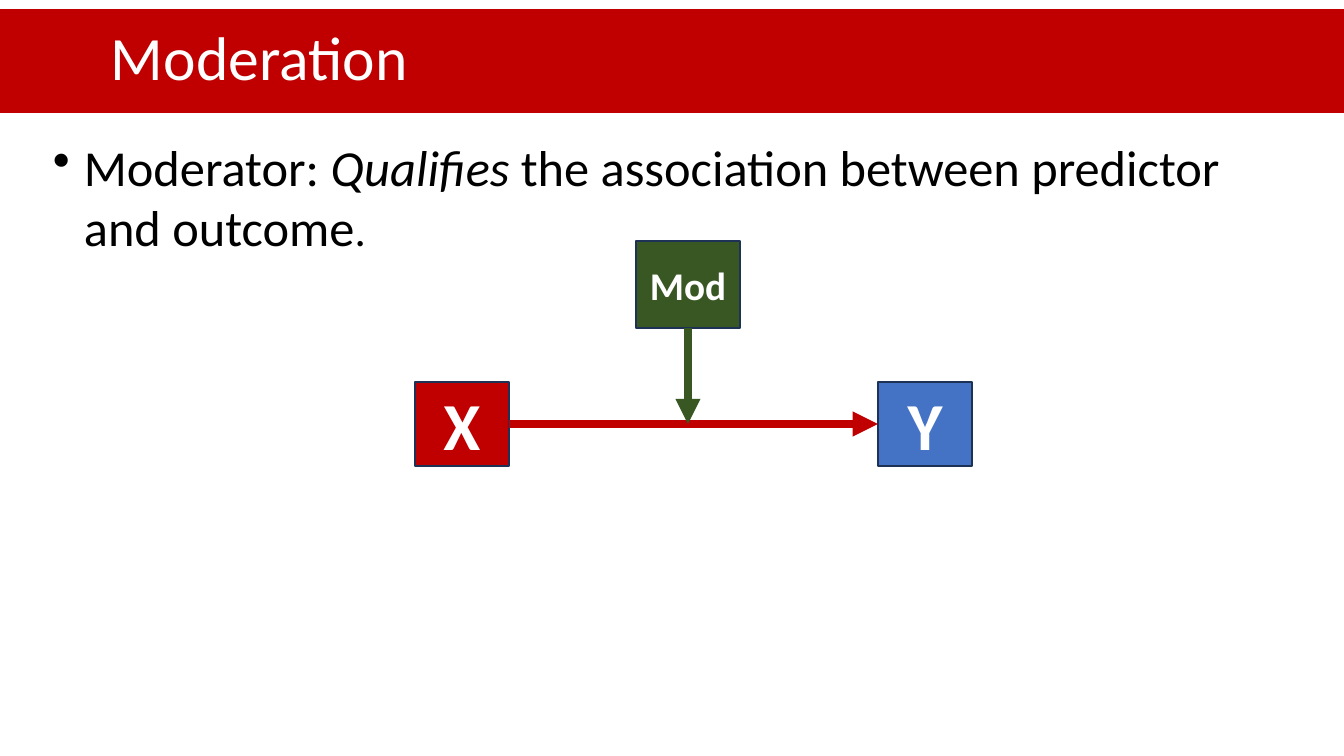
from dataclasses import dataclass

from lxml.etree import SubElement
from pptx import Presentation
from pptx.dml.color import RGBColor
from pptx.enum.shapes import MSO_CONNECTOR, MSO_SHAPE
from pptx.enum.text import MSO_ANCHOR, PP_ALIGN
from pptx.oxml.ns import qn
from pptx.util import Pt

EMU_PER_PX = 12192000 / 1344


@dataclass(frozen=True)
class Theme:
    """Colours, font and type sizes of the slide."""
    font: str = "Calibri"
    red: str = "C00000"
    blue: str = "4472C4"
    green: str = "385723"
    outline: str = "1E3256"
    white: str = "FFFFFF"
    black: str = "000000"
    title: int = 44
    body: int = 36
    stop: int = 32
    variable: int = 48
    moderator: int = 28
    arrow: int = 6


THEME = Theme()


def px(n):
    """Turn pixels into EMU."""
    return round(n * EMU_PER_PX)


def rgb(colour):
    """Turn a hex string into a colour."""
    return RGBColor.from_string(colour)


def set_font(p, size, colour, bold=False):
    """Set the font of a paragraph."""
    p.font.name = THEME.font
    p.font.size = Pt(size)
    p.font.bold = bold
    p.font.color.rgb = rgb(colour)


def add_rect(s, box, fill, outline=None):
    """Add a flat rectangle with vertically centred text."""
    sp = s.shapes.add_shape(MSO_SHAPE.RECTANGLE, *map(px, box))
    sp.shadow.inherit = False
    sp.fill.solid()
    sp.fill.fore_color.rgb = rgb(fill)
    if outline:
        sp.line.color.rgb = rgb(outline)
        sp.line.width = Pt(1)
    else:
        sp.line.fill.background()
    sp.text_frame.vertical_anchor = MSO_ANCHOR.MIDDLE
    return sp


def add_title(s, box, text):
    """Add the title band."""
    tf = add_rect(s, box, THEME.red).text_frame
    tf.margin_left = px(111)
    p = tf.paragraphs[0]
    p.text = text
    p.alignment = PP_ALIGN.LEFT
    p.line_spacing = 0.9
    set_font(p, THEME.title, THEME.white)


def add_definition(s, box):
    """Add the bulleted definition."""
    tf = s.shapes.add_textbox(*map(px, box)).text_frame
    tf.word_wrap = True
    p = tf.paragraphs[0]
    p.space_before = Pt(12)
    set_font(p, THEME.body, THEME.black)
    for text in ("Moderator: ", "Qualifies",
                 " the association between predictor and outcome", "."):
        r = p.add_run()
        r.text = text
        if text == "Qualifies":
            r.font.italic = True
    r.font.size = Pt(THEME.stop)
    pPr = p._p.get_or_add_pPr()
    pPr.set("marL", str(px(31)))
    pPr.set("indent", str(-px(31)))
    bullet = pPr.makeelement(qn("a:buChar"), {"char": "•"})
    pPr.insert_element_before(bullet, "a:tabLst", "a:defRPr", "a:extLst")


def add_node(s, box, text, fill, size):
    """Add a labelled variable box."""
    p = add_rect(s, box, fill, THEME.outline).text_frame.paragraphs[0]
    p.text = text
    p.alignment = PP_ALIGN.CENTER
    set_font(p, size, THEME.white, bold=True)


def add_arrow(s, start, end, colour):
    """Add a thick straight arrow."""
    cx = s.shapes.add_connector(MSO_CONNECTOR.STRAIGHT, *map(px, start + end))
    cx.line.color.rgb = rgb(colour)
    cx.line.width = Pt(THEME.arrow)
    SubElement(cx.line._get_or_add_ln(), qn("a:tailEnd"), type="triangle")
    SubElement(cx._element.spPr, qn("a:effectLst"))


def add_diagram(s, box):
    """Add the moderation diagram: X to Y, with Mod acting on the path."""
    x, y, w, h = box
    node_w, node_h = 94, 84
    mod_w, mod_h = 104, 87
    mod_x = x + (w - mod_w) // 2 - 5
    row_y = y + h - node_h
    mid_y = row_y + node_h // 2
    mid_x = mod_x + mod_w // 2
    right = x + w - node_w
    add_node(s, (x, row_y, node_w, node_h), "X", THEME.red, THEME.variable)
    add_node(s, (right, row_y, node_w, node_h), "Y", THEME.blue, THEME.variable)
    add_node(s, (mod_x, y, mod_w, mod_h), "Mod", THEME.green, THEME.moderator)
    add_arrow(s, (x + node_w, mid_y), (right, mid_y), THEME.red)
    add_arrow(s, (mid_x, y + mod_h), (mid_x, mid_y), THEME.green)


def main():
    """Build and save the slide."""
    prs = Presentation()
    prs.slide_width, prs.slide_height = px(1344), px(756)
    s = prs.slides.add_slide(prs.slide_layouts[6])
    add_title(s, (0, 9, 1344, 104), "Moderation")
    add_definition(s, (43, 131, 1213, 197))
    add_diagram(s, (415, 241, 557, 225))
    prs.save("out.pptx")


if __name__ == "__main__":
    main()
